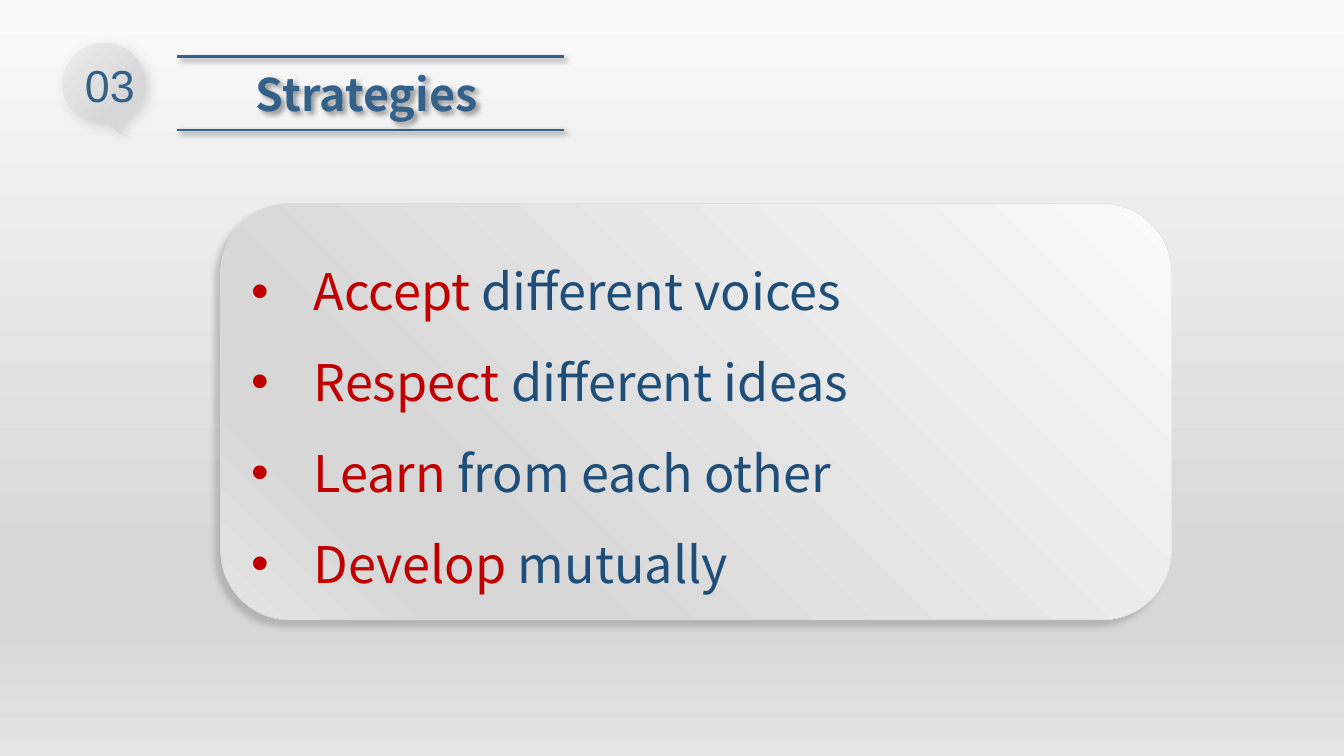
from lxml.etree import SubElement
from pptx import Presentation
from pptx.dml.color import RGBColor
from pptx.enum.shapes import MSO_CONNECTOR as Connector, MSO_SHAPE as Preset
from pptx.enum.text import MSO_ANCHOR as Anchor, MSO_AUTO_SIZE as AutoSize, PP_ALIGN as Align
from pptx.oxml.ns import qn
from pptx.util import Pt

PX = 9144
HEADING_FONT, NUMBER_FONT = "Noto Sans CJK SC", "Arial"
COLORS = {
    "white": "FAFAFA", "pale": "EDEDED", "silver": "D7D7D7", "mist": "E4E4E4",
    "steel": "34618A", "navy": "1F4E79", "red": "C00000",
    "black": "000000", "gray": "808080", "ash": "A6A6A6",
}
STRATEGIES = [
    ("Accept ", "different voices"),
    ("Respect ", "different ideas"),
    ("Learn ", "from each other"),
    ("Develop ", "mutually"),
]


def px(*lengths):
    """Turn px lengths into EMU."""
    return [length * PX for length in lengths]


def rgb(name):
    """Look up a named colour."""
    return RGBColor.from_string(COLORS[name])


def add_color(parent, name):
    """Append a colour element and return it."""
    return SubElement(parent, qn("a:srgbClr"), val=COLORS[name])


def set_gradient(fill, element, start, angle):
    """Give a fill the four-stop silver gradient."""
    fill.gradient()
    gradient = next(element.iter(qn("a:gradFill")))
    for child in list(gradient):
        gradient.remove(child)
    stops = SubElement(gradient, qn("a:gsLst"))
    for position, name in ((0, start), (74, "silver"), (83, "silver"), (100, "mist")):
        add_color(SubElement(stops, qn("a:gs"), pos=str(position * 1000)), name)
    SubElement(gradient, qn("a:lin"), ang=str(angle * 60000), scaled="0")


def add_shadow(shape, color, blur, distance, angle):
    """Give a shape a soft outer shadow at 40 percent opacity."""
    effects = SubElement(shape.element.find(qn("p:spPr")), qn("a:effectLst"))
    outer = SubElement(
        effects, qn("a:outerShdw"), blurRad=str(Pt(blur)), dist=str(Pt(distance)),
        dir=str(angle * 60000), algn="ctr", rotWithShape="0")
    SubElement(add_color(outer, color), qn("a:alpha"), val="40000")


def add_span(para, text, size, font, color, bold=False):
    """Append one formatted run."""
    span = para.add_run()
    span.text = text
    span.font.size = Pt(size)
    span.font.name = font
    span.font.bold = bold
    span.font.color.rgb = rgb(color)
    SubElement(span.font._element, qn("a:ea"), typeface=font)


def add_label(shapes, place, text, font, align, bold=False):
    """Add a one-line text box that does not wrap."""
    box = shapes.add_textbox(*px(*place))
    box.text_frame.word_wrap = False
    box.text_frame.auto_size = AutoSize.SHAPE_TO_FIT_TEXT
    para = box.text_frame.paragraphs[0]
    para.alignment = align
    add_span(para, text, 32, font, "steel", bold)
    return box


def add_rule(shapes, left, right, y):
    """Add a horizontal shadowed line."""
    rule = shapes.add_connector(Connector.STRAIGHT, *px(left, y, right, y))
    rule.line.color.rgb = rgb("steel")
    rule.line.width = Pt(2)
    add_shadow(rule, "black", 4, 3, 45)


def add_badge(page, number):
    """Add the numbered speech bubble."""
    shapes = page.shapes.add_group_shape().shapes
    bubble = shapes.add_shape(Preset.OVAL_CALLOUT, *px(62, 43, 82, 80))
    bubble.element.spPr.find(qn("a:xfrm")).set("flipH", "1")
    set_gradient(bubble.fill, bubble.element, "pale", 135)
    bubble.line.fill.background()
    add_shadow(bubble, "ash", 8, 4, 45)
    add_label(shapes, (70, 52, 78, 64), number, NUMBER_FONT, Align.CENTER)


def add_title(page, text):
    """Add the heading between two rules."""
    rules = page.shapes.add_group_shape().shapes
    for y in (129, 56):
        add_rule(rules, 176, 559, y)
    title = add_label(page.shapes, (244, 61, 243, 64), text, HEADING_FONT, Align.LEFT, True)
    add_shadow(title, "black", 4, 3, 45)


def set_bullet(para, indent):
    """Give a paragraph a hanging round bullet."""
    props = para._p.get_or_add_pPr()
    props.set("marL", str(indent * PX))
    props.set("indent", str(-indent * PX))
    SubElement(props, qn("a:buFont"), typeface="Arial")
    SubElement(props, qn("a:buChar"), char="•")


def add_card(page, items):
    """Add the rounded card with its bulleted strategies."""
    card = page.shapes.add_shape(Preset.FLOWCHART_ALTERNATE_PROCESS, *px(219, 202, 943, 413))
    set_gradient(card.fill, card.element, "white", 135)
    card.line.color.rgb = rgb("silver")
    card.line.width = Pt(0.25)
    add_shadow(card, "gray", 4, 6, 135)
    frame = card.text_frame
    frame.word_wrap = True
    frame.vertical_anchor = Anchor.MIDDLE
    for index, (verb, rest) in enumerate(items):
        para = frame.add_paragraph() if index else frame.paragraphs[0]
        set_bullet(para, 62)
        para.alignment = Align.LEFT
        para.line_spacing = 1.5
        add_span(para, verb, 36, HEADING_FONT, "red")
        add_span(para, rest, 36, HEADING_FONT, "navy")


def main():
    """Build and save the deck."""
    deck = Presentation()
    deck.slide_width, deck.slide_height = px(1333, 750)
    page = deck.slides.add_slide(deck.slide_layouts[6])
    set_gradient(page.background.fill, page.element, "white", 90)
    add_badge(page, "03")
    add_title(page, "Strategies")
    add_card(page, STRATEGIES)
    deck.save("out.pptx")


if __name__ == "__main__":
    main()
